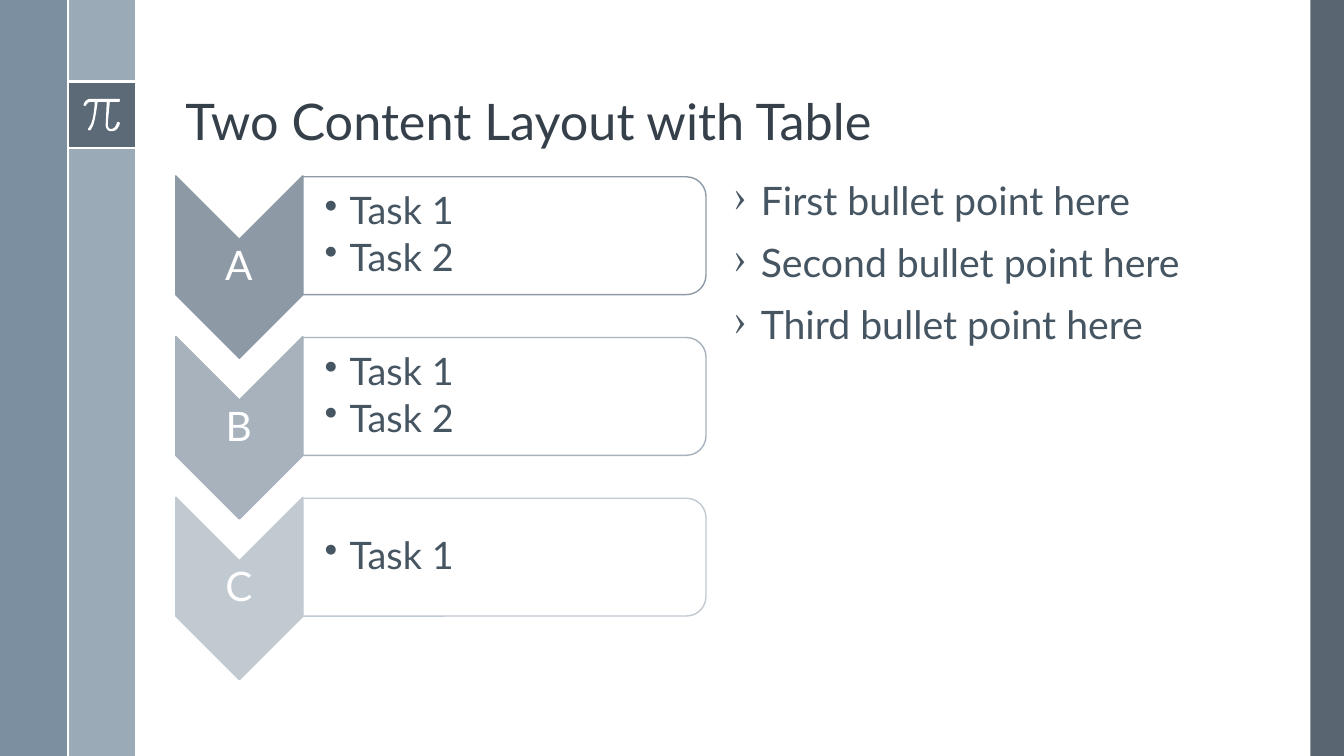
import pptx
import pptx.dml.color
import pptx.enum.shapes
import pptx.enum.text
import pptx.oxml
import pptx.oxml.ns
import pptx.util

Pt = pptx.util.Pt
SHAPES = pptx.enum.shapes.MSO_SHAPE
ALIGN = pptx.enum.text.PP_ALIGN
ANCHOR = pptx.enum.text.MSO_ANCHOR
RGB = pptx.dml.color.RGBColor.from_string
qn = pptx.oxml.ns.qn
DRAWING_NS = pptx.oxml.ns.nsdecls("a")

COLORS = {
    "white": "FFFFFF", "title": "35404A", "text": "465562",
    "slate": "475562", "band": "9BAAB7", "edge": "6A8093",
    "A": "8D9AA6", "B": "A7B2BC", "C": "C1C9D1",
}

presentation = pptx.Presentation()
presentation.slide_width, presentation.slide_height = Pt(960), Pt(540)
slide = presentation.slides.add_slide(presentation.slide_layouts[5])
shapes = slide.shapes


def add_block(kind, box, fill, opacity=100, outline=None, rotation=0):
    shape = shapes.add_shape(kind, *map(Pt, box))
    shape.shadow.inherit = False
    shape.rotation = rotation
    shape.fill.solid()
    shape.fill.fore_color.rgb = RGB(COLORS[fill])
    if opacity < 100:
        color = shape._element.spPr.find(qn("a:solidFill")).find(qn("a:srgbClr"))
        color.append(pptx.oxml.parse_xml(f'<a:alpha {DRAWING_NS} val="{opacity * 1000}"/>'))
    if outline:
        shape.line.color.rgb = RGB(COLORS[outline])
        shape.line.width = Pt(1)
    else:
        shape.line.fill.background()


def write_text(shape, lines, size, color, frame_format, paragraph_format, bullet=None, indent=0):
    """Fill a shape with one paragraph per line, each with a hanging bullet if one is given."""
    frame = shape.text_frame
    frame.word_wrap = True
    frame.auto_size = pptx.enum.text.MSO_AUTO_SIZE.NONE
    for name, value in frame_format.items():
        setattr(frame, name, value)
    for index, line in enumerate(lines):
        paragraph = frame.paragraphs[0] if index == 0 else frame.add_paragraph()
        paragraph.line_spacing = 0.9
        for name, value in paragraph_format.items():
            setattr(paragraph, name, value)
        run = paragraph.add_run()
        run.text = line
        run.font.name = "Lato"
        run.font.size = Pt(size)
        run.font.color.rgb = RGB(COLORS[color])
        if bullet:
            properties = paragraph._p.get_or_add_pPr()
            properties.set("marL", str(Pt(indent)))
            properties.set("indent", str(-Pt(indent)))
            properties.append(pptx.oxml.parse_xml(f'<a:buChar {DRAWING_NS} char="{bullet}"/>'))


# Side bands and icon tile
for box, fill, opacity in [
    ((936, 0, 24, 540), "slate", 90),
    ((48, 0, 48.4, 540), "band", 100),
    ((0, 0, 48.4, 540), "edge", 88),
    ((48.4, 58.2, 48, 48), "slate", 75),
]:
    add_block(SHAPES.RECTANGLE, box, fill, opacity)

for ends in [(48.4, 58.2, 96.4, 58.2), (48.4, 105.9, 96.4, 105.9), (48.4, 0, 48.4, 540)]:
    rule = shapes.add_connector(pptx.enum.shapes.MSO_CONNECTOR.STRAIGHT, *map(Pt, ends))
    rule.line.color.rgb = RGB(COLORS["white"])
    rule.line.width = Pt(1.5)
    rule._element.spPr.append(pptx.oxml.parse_xml(f"<a:effectLst {DRAWING_NS}/>"))

# Pi sign in thousandths of an inch: pairs are corners, sixes are Bézier curves
pi_start = (1180, 980)
pi_steps = [
    (900, 980), (850, 980, 830, 1030, 830, 1040), (830, 1050, 840, 1050, 845, 1053),
    (850, 1050), (850, 1050, 870, 1010, 900, 1010), (940, 1010),
    (940, 1050, 930, 1220, 880, 1270), (870, 1280, 870, 1290, 885, 1294),
    (900, 1290), (950, 1230, 960, 1050, 970, 1010), (1060, 1010), (1050, 1220),
    (1050, 1220, 1040, 1260, 1070, 1290), (1080, 1300, 1090, 1300, 1100, 1300),
    (1110, 1300, 1110, 1300, 1120, 1300), (1170, 1300, 1190, 1230, 1190, 1220),
    (1190, 1220, 1180, 1210, 1180, 1210), (1170, 1210, 1160, 1210, 1160, 1220),
    (1160, 1220, 1150, 1270, 1110, 1280), (1100, 1280, 1090, 1280, 1080, 1270),
    (1070, 1260, 1070, 1230, 1070, 1220), (1090, 1010), (1180, 1010),
    (1190, 1010, 1190, 1000, 1190, 1000), (1190, 990, 1190, 980, 1180, 980),
]
pi_points = [pi_start]
for step in pi_steps:
    if len(step) == 2:
        pi_points.append(step)
        continue
    x0, y0 = pi_points[-1]
    x1, y1, x2, y2, x3, y3 = step
    for t in (0.2, 0.4, 0.6, 0.8, 1):
        weights = ((1 - t) ** 3, 3 * t * (1 - t) ** 2, 3 * t * t * (1 - t), t ** 3)
        pi_points.append(tuple(
            sum(weight * value for weight, value in zip(weights, values))
            for values in ((x0, x1, x2, x3), (y0, y1, y2, y3))))
builder = shapes.build_freeform(*pi_start, scale=Pt(72) / 1000)
builder.add_line_segments(pi_points[1:], close=True)
pi_sign = builder.convert_to_shape()
pi_sign.shadow.inherit = False
pi_sign.fill.solid()
pi_sign.fill.fore_color.rgb = RGB(COLORS["white"])
pi_sign.line.fill.background()

# Title and bullet list
title = shapes.title
title.left, title.top, title.width, title.height = map(Pt, (125.3, 13.7, 770.4, 97.9))
write_text(title, ["Two Content Layout with Table"], 36, "title",
           {"vertical_anchor": ANCHOR.BOTTOM}, {"alignment": ALIGN.LEFT})

bullet_list = shapes.add_textbox(*map(Pt, (517, 126, 379.4, 360)))
write_text(bullet_list,
           [f"{order} bullet point here" for order in ("First", "Second", "Third")],
           28, "text", {"vertical_anchor": ANCHOR.TOP}, {"space_before": Pt(14)}, "›", 19.4)

# Chevron steps with their tasks
ROW_PITCH = 114.8
tight_margins = {"vertical_anchor": ANCHOR.MIDDLE}
for side in ("left", "top", "right", "bottom"):
    tight_margins[f"margin_{side}"] = Pt(1.4)
task_margins = {**tight_margins, "margin_left": Pt(15.1)}
steps = {"A": ["Task 1", "Task 2"], "B": ["Task 1", "Task 2"], "C": ["Task 1"]}

for row, (letter, tasks) in enumerate(steps.items()):
    offset = row * ROW_PITCH
    add_block(SHAPES.CHEVRON, (105.8, 145.4 + offset, 130.3, 90.7), letter,
              outline=letter, rotation=90)
    label = shapes.add_textbox(*map(Pt, (125.3, 171.4 + offset, 90.7, 38.9)))
    write_text(label, [letter], 29, "white", tight_margins,
               {"alignment": ALIGN.CENTER, "space_after": Pt(10.15)})
    add_block(SHAPES.ROUND_2_SAME_RECTANGLE, (318.2, 24.4 + offset, 84.2, 288), "white",
              opacity=90, outline=letter, rotation=90)
    task_list = shapes.add_textbox(*map(Pt, (216.7, 130.3 + offset, 283.7, 76.3)))
    write_text(task_list, tasks, 27, "text", task_margins,
               {"space_after": Pt(4.05)}, "•", 18)

presentation.save("out.pptx")
